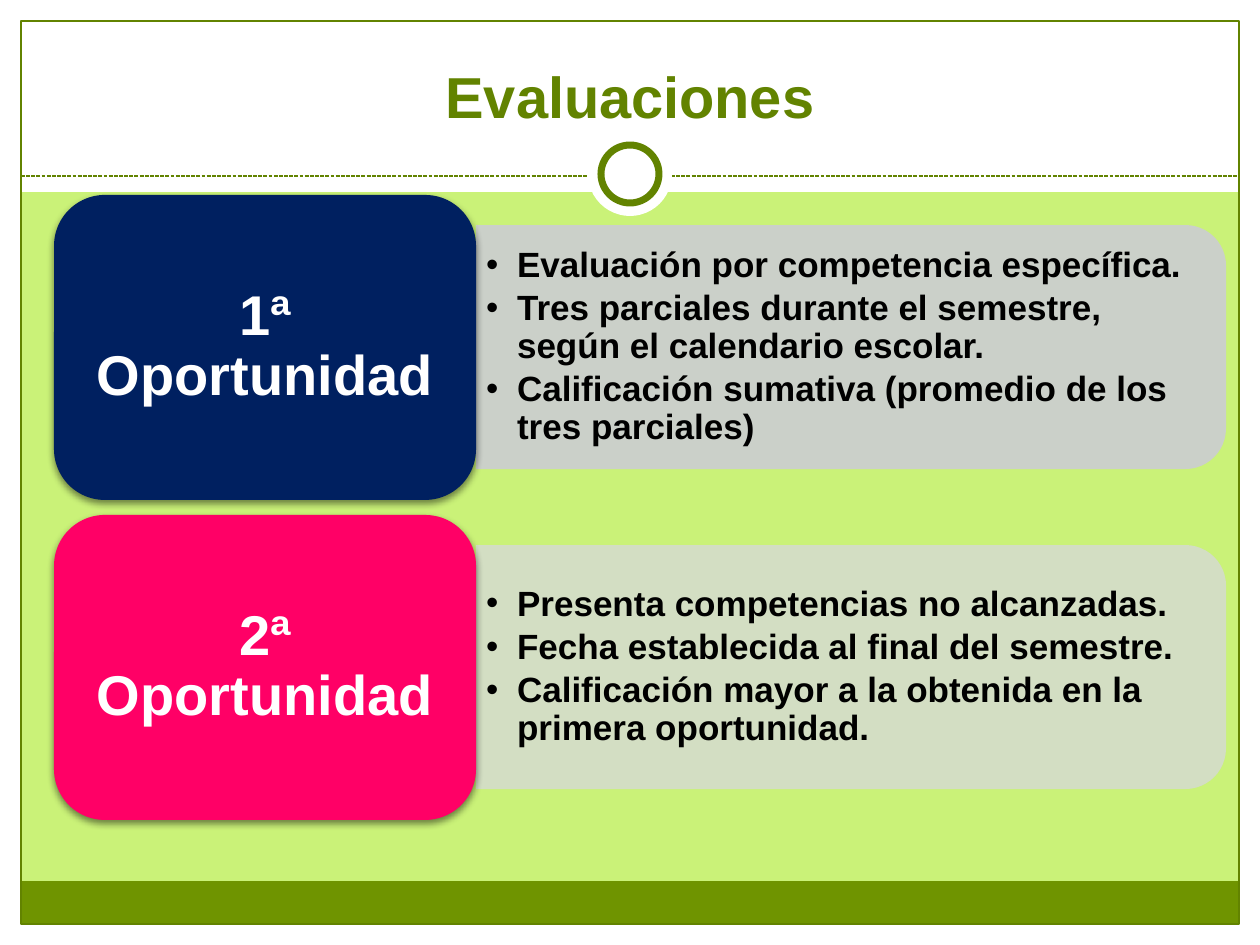
"""Build the slide that explains the two evaluation opportunities."""
from dataclasses import dataclass
from typing import Optional

from lxml.etree import SubElement
from pptx import Presentation
from pptx.dml.color import RGBColor
from pptx.enum.dml import MSO_LINE
from pptx.enum.shapes import MSO_CONNECTOR, MSO_SHAPE
from pptx.enum.text import MSO_ANCHOR, PP_ALIGN
from pptx.oxml.ns import qn
from pptx.util import Emu, Pt

SCALE = 914400 / 126
FONT = "Arial"
COLORS = {
    "background": "CAF278", "white": "FFFFFF", "black": "000000",
    "olive": "628300", "footer": "6F9400",
    "navy": "002060", "pink": "FF0066",
    "gray": "CCCDD2", "sage": "D4DCCC",
}
WIDTH, HEIGHT = 1260, 945
EDGE = 21
HEADER_HEIGHT = 192
CARD_LEFT, CARD_TOP, CARD_WIDTH, CARD_HEIGHT = 54, 195, 422, 305
CARD_STEP = 320
PANEL_WIDTH, PANEL_HEIGHT = 750, 244
BULLET_INDENT = 31


@dataclass(frozen=True)
class Box:
    left: int
    top: int
    width: int
    height: int

    def lengths(self) -> tuple:
        return tuple(px(v) for v in (self.left, self.top, self.width, self.height))


@dataclass(frozen=True)
class Opportunity:
    title: str
    card_color: str
    panel_color: str
    points: tuple


OPPORTUNITIES = (
    Opportunity("1ª Oportunidad", "navy", "gray", (
        "Evaluación por competencia específica.",
        "Tres parciales durante el semestre, según el calendario escolar.",
        "Calificación sumativa (promedio de los tres parciales)",
    )),
    Opportunity("2ª Oportunidad", "pink", "sage", (
        "Presenta competencias no alcanzadas.",
        "Fecha establecida al final del semestre.",
        "Calificación mayor a la obtenida en la primera oportunidad.",
    )),
)


def px(value: int) -> Emu:
    return Emu(round(value * SCALE))


def color(name: str) -> RGBColor:
    return RGBColor.from_string(COLORS[name])


def add_figure(page, kind, box: Box, fill: Optional[str] = None,
               line: Optional[str] = None, weight: float = 0.75):
    figure = page.shapes.add_shape(kind, *box.lengths())
    figure.shadow.inherit = False
    if fill:
        figure.fill.solid()
        figure.fill.fore_color.rgb = color(fill)
    else:
        figure.fill.background()
    if line:
        figure.line.color.rgb = color(line)
        figure.line.width = Pt(weight)
    else:
        figure.line.fill.background()
    return figure


def prepare_frame(shape, anchor, side: int, end: int):
    frame = shape.text_frame
    frame.word_wrap = True
    frame.vertical_anchor = anchor
    frame.margin_left = frame.margin_right = px(side)
    frame.margin_top = frame.margin_bottom = px(end)
    return frame


def add_span(para, text: str, size: int, ink: str) -> None:
    span = para.add_run()
    span.text = text
    span.font.name = FONT
    span.font.size = Pt(size)
    span.font.bold = True
    span.font.color.rgb = color(ink)


def add_shadow(shape) -> None:
    effects = shape.element.spPr.find(qn("a:effectLst"))
    shadow = SubElement(effects, qn("a:outerShdw"), blurRad=str(Pt(4)),
                        dist=str(Pt(2)), dir="5400000", rotWithShape="0")
    tint = SubElement(shadow, qn("a:srgbClr"), val=COLORS["black"])
    SubElement(tint, qn("a:alpha"), val="45000")


def add_bullet(para) -> None:
    properties = para._p.get_or_add_pPr()
    properties.set("marL", str(px(BULLET_INDENT)))
    properties.set("indent", str(-px(BULLET_INDENT)))
    SubElement(properties, qn("a:buFont"), typeface=FONT)
    SubElement(properties, qn("a:buChar"), char="•")


def add_panel(page, item: Opportunity, top: int) -> None:
    left = CARD_LEFT + CARD_WIDTH
    middle = top + CARD_HEIGHT // 2
    upright = Box(left + (PANEL_WIDTH - PANEL_HEIGHT) // 2,
                  middle - PANEL_WIDTH // 2, PANEL_HEIGHT, PANEL_WIDTH)
    panel = add_figure(page, MSO_SHAPE.ROUND_2_SAME_RECTANGLE, upright, item.panel_color)
    panel.rotation = 90
    tint = panel.element.spPr.find(qn("a:solidFill")).find(qn("a:srgbClr"))
    SubElement(tint, qn("a:alpha"), val="90000")

    area = Box(left, middle - 110, PANEL_WIDTH - 12, 220)
    frame = prepare_frame(page.shapes.add_textbox(*area.lengths()), MSO_ANCHOR.MIDDLE, 10, 5)
    for index, point in enumerate(item.points):
        para = frame.add_paragraph() if index else frame.paragraphs[0]
        para.line_spacing = 0.9
        para.space_after = Pt(3)
        add_bullet(para)
        add_span(para, point, 20, "black")


def add_card(page, item: Opportunity, top: int) -> None:
    box = Box(CARD_LEFT, top, CARD_WIDTH, CARD_HEIGHT)
    card = add_figure(page, MSO_SHAPE.ROUNDED_RECTANGLE, box, item.card_color)
    add_shadow(card)
    para = prepare_frame(card, MSO_ANCHOR.MIDDLE, 16, 9).paragraphs[0]
    para.alignment = PP_ALIGN.CENTER
    para.line_spacing = 0.9
    add_span(para, item.title, 32, "white")


def add_divider(page, y: int) -> None:
    divider = page.shapes.add_connector(
        MSO_CONNECTOR.STRAIGHT, px(EDGE), px(y), px(WIDTH - EDGE), px(y))
    divider.line.color.rgb = color("olive")
    divider.line.width = Pt(0.75)
    divider.line.dash_style = MSO_LINE.SQUARE_DOT
    SubElement(divider.element.spPr, qn("a:effectLst"))


def add_backdrop(page) -> None:
    page.background.fill.solid()
    page.background.fill.fore_color.rgb = color("background")
    inner_width, inner_height = WIDTH - 2 * EDGE, HEIGHT - 2 * EDGE
    for margin in (Box(0, HEIGHT - EDGE, WIDTH, EDGE), Box(0, 0, WIDTH, HEADER_HEIGHT),
                   Box(0, 0, EDGE, HEIGHT), Box(WIDTH - EDGE, 0, EDGE, HEIGHT)):
        add_figure(page, MSO_SHAPE.RECTANGLE, margin, "white")
    add_figure(page, MSO_SHAPE.RECTANGLE, Box(EDGE, 881, inner_width, 43), "footer")
    add_figure(page, MSO_SHAPE.RECTANGLE, Box(EDGE, EDGE, inner_width, inner_height), line="olive")
    add_divider(page, 176)
    add_figure(page, MSO_SHAPE.OVAL, Box(588, 132, 84, 84), "white")
    add_figure(page, MSO_SHAPE.OVAL, Box(601, 145, 58, 58), "white", "olive", 4)


def add_title(page) -> None:
    box = Box(42, 31, 1176, 105)
    frame = prepare_frame(page.shapes.add_textbox(*box.lengths()), MSO_ANCHOR.BOTTOM, 13, 6)
    para = frame.paragraphs[0]
    para.alignment = PP_ALIGN.CENTER
    add_span(para, "Evaluaciones", 33, "olive")


def main() -> None:
    deck = Presentation()
    deck.slide_width, deck.slide_height = px(WIDTH), px(HEIGHT)
    page = deck.slides.add_slide(deck.slide_layouts[6])
    add_backdrop(page)
    add_title(page)
    for index, item in enumerate(OPPORTUNITIES):
        top = CARD_TOP + index * CARD_STEP
        add_panel(page, item, top)
        add_card(page, item, top)
    deck.save("out.pptx")


if __name__ == "__main__":
    main()
